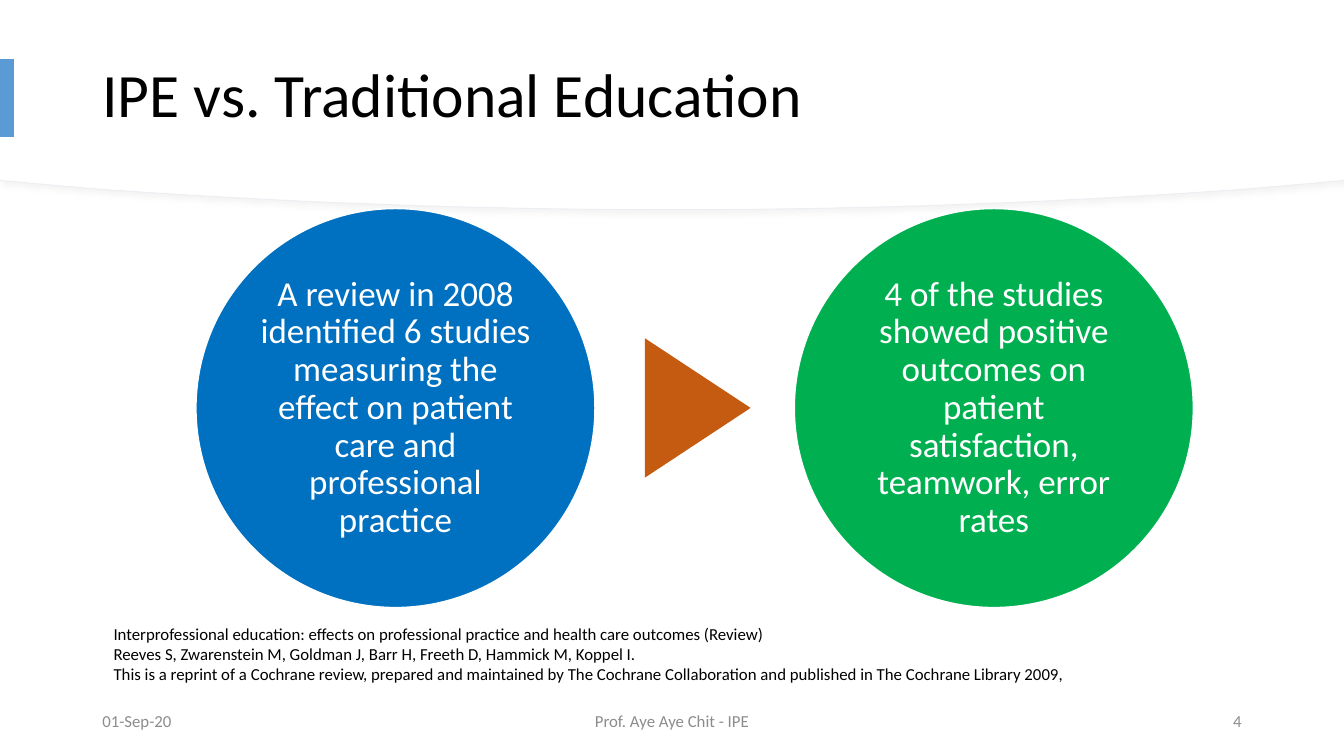
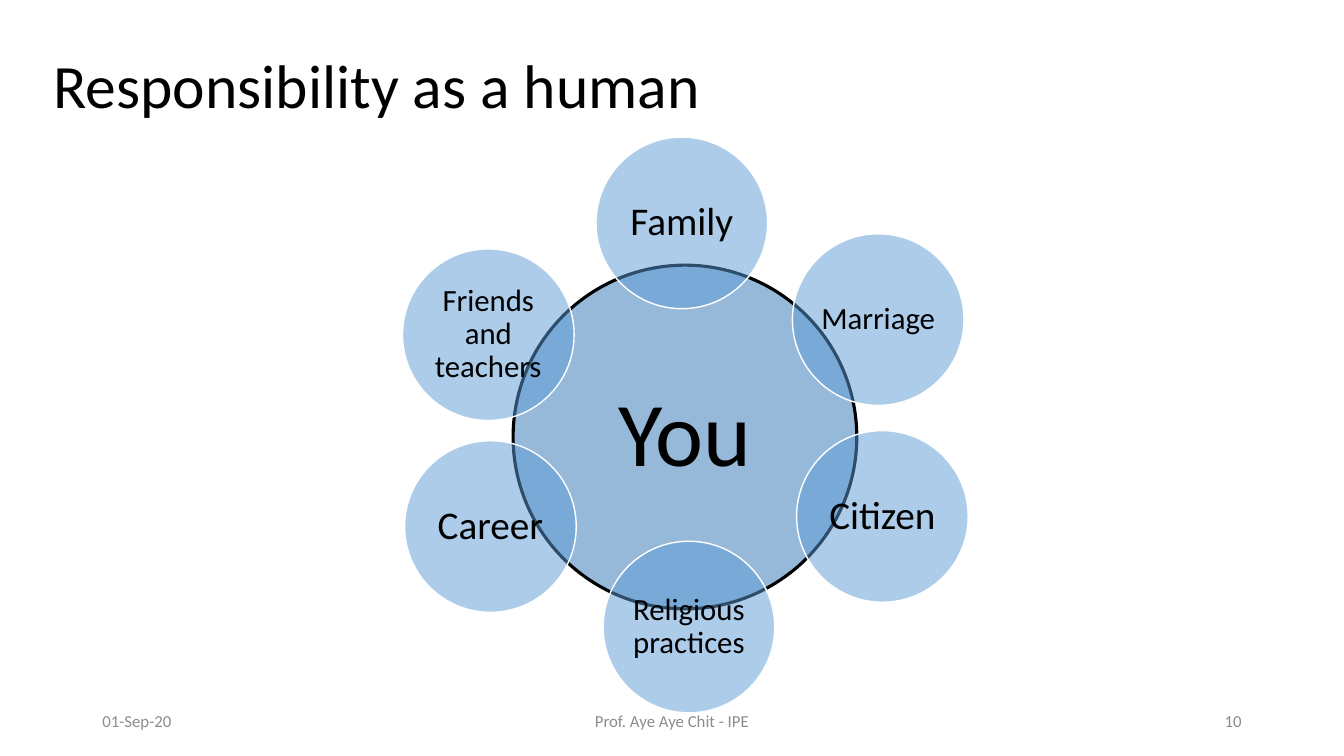
from dataclasses import dataclass
from typing import Optional

import pptx
import pptx.util
import pptx.dml.color
import pptx.enum.shapes
import pptx.enum.text
import pptx.oxml
import pptx.oxml.ns
import pptx.presentation
import pptx.shapes.autoshape
import pptx.slide

Pt = pptx.util.Pt
Align = pptx.enum.text.PP_ALIGN
Anchor = pptx.enum.text.MSO_ANCHOR
Kind = pptx.enum.shapes.MSO_SHAPE
Deck = pptx.presentation.Presentation
Slide = pptx.slide.Slide
Shape = pptx.shapes.autoshape.Shape

WIDTH, HEIGHT = 960, 540
FONT = "Calibri"
COLORS = {
    "black": "000000",
    "white": "FFFFFF",
    "gray": "8C8C8C",
    "edge": "EBEEF2",
    "shade": "D9D9D9",
    "accent": "5B9BD5",
    "hub": "2E75B6",
    "blue": "0070C0",
    "green": "00B050",
    "orange": "C55A11",
}


@dataclass
class Box:
    left: float
    top: float
    width: float
    height: float

    def spread(self) -> list[pptx.util.Length]:
        return [Pt(v) for v in (self.left, self.top, self.width, self.height)]


@dataclass
class Disc:
    text: str
    left: float
    top: float
    side: float
    size: float
    fill: str
    inset: float = 2.2
    line: str = "white"
    weight: float = 1
    alpha: Optional[int] = None


@dataclass
class Note:
    box: Box
    align: Align


FOOTERS = [
    Note(Box(66, 500.5, 216, 28.75), Align.LEFT),
    Note(Box(318, 500.5, 324, 28.75), Align.CENTER),
    Note(Box(678, 500.5, 216, 28.75), Align.RIGHT),
]
DATE = "01-Sep-20"
AUTHOR = "Prof. Aye Aye Chit - IPE"

REVIEW = [
    Disc("A review in 2008 identified 6 studies measuring the effect on patient "
         "care and professional practice", 140, 149, 285, 25, "blue"),
    Disc("4 of the studies showed positive outcomes on patient satisfaction, "
         "teamwork, error rates", 567.4, 149, 285, 25, "green"),
]
SOURCE = [
    "Interprofessional education: effects on professional practice and health care outcomes (Review)",
    "Reeves S, Zwarenstein M, Goldman J, Barr H, Freeth D, Hammick M, Koppel I.",
    "This is a reprint of a Cochrane review, prepared and maintained by The Cochrane "
    "Collaboration and published in The Cochrane Library 2009,",
]

HUB = Disc("You", 366.5, 189.4, 245.5, 65, "hub", 6.5, "black", 2.25, 50)
ROLES = [
    ("Family", 425.7, 97.9, 28),
    ("Marriage", 566, 167, 22),
    ("Citizen", 569, 307.6, 28),
    ("Religious practices", 430.8, 386.6, 22),
    ("Career", 289, 314.8, 28),
    ("Friends and teachers", 287.5, 177.8, 22),
]
ROLE_SIDE = 122.6


def color(name: str) -> pptx.dml.color.RGBColor:
    return pptx.dml.color.RGBColor.from_string(COLORS[name])


def paint(shape: Shape, fill: str, line: Optional[str] = None, weight: float = 1,
          alpha: Optional[int] = None) -> None:
    shape.shadow.inherit = False
    shape.fill.solid()
    shape.fill.fore_color.rgb = color(fill)
    if alpha is not None:
        tint = shape.element.spPr.find(pptx.oxml.ns.qn("a:solidFill"))[0]
        tint.append(pptx.oxml.parse_xml(
            f'<a:alpha {pptx.oxml.ns.nsdecls("a")} val="{alpha * 1000}"/>'))
    if line is None:
        shape.line.fill.background()
    else:
        shape.line.color.rgb = color(line)
        shape.line.width = Pt(weight)


def write(shape: Shape, lines: list[str], size: float, ink: str = "black",
          align: Align = Align.LEFT, anchor: Anchor = Anchor.MIDDLE,
          inset: Optional[float] = None, pitch: float = 1) -> None:
    frame = shape.text_frame
    frame.word_wrap = True
    frame.auto_size = pptx.enum.text.MSO_AUTO_SIZE.NONE
    frame.vertical_anchor = anchor
    if inset is not None:
        frame.margin_left = frame.margin_right = Pt(inset)
        frame.margin_top = frame.margin_bottom = Pt(inset)
    frame.text = "\n".join(lines)
    for para in frame.paragraphs:
        para.alignment = align
        para.line_spacing = pitch
        para.font.name = FONT
        para.font.size = Pt(size)
        para.font.color.rgb = color(ink)


def label(slide: Slide, box: Box, lines: list[str], align: Align = Align.LEFT,
          ink: str = "black", anchor: Anchor = Anchor.MIDDLE) -> None:
    write(slide.shapes.add_textbox(*box.spread()), lines, 12, ink, align, anchor)


def draw(slide: Slide, disc: Disc, ink: str) -> None:
    box = Box(disc.left, disc.top, disc.side, disc.side)
    shape = slide.shapes.add_shape(Kind.OVAL, *box.spread())
    paint(shape, disc.fill, disc.line, disc.weight, disc.alpha)
    write(shape, [disc.text], disc.size, ink, Align.CENTER, inset=disc.inset, pitch=0.9)


def curve(start: tuple, pull: tuple, push: tuple, end: tuple, steps: int = 24) -> list[tuple]:
    dots = []
    for step in range(1, steps + 1):
        t = step / steps
        u = 1 - t
        dots.append(tuple(u**3 * a + 3 * u * u * t * b + 3 * u * t * t * c + t**3 * d
                          for a, b, c, d in zip(start, pull, push, end)))
    return dots


def sweep(slide: Slide, low: float) -> Shape:
    mid = (WIDTH / 2, low)
    right, left = (894.3, low - 15.1), (65.7, low - 15.1)
    dots = [(WIDTH, 0), (WIDTH, low - 20.9), right]
    dots += curve(right, (766.8, low - 5.8), (627.1, low), mid)
    dots += curve(mid, (332.9, low), (193.2, low - 5.8), left)
    dots.append((0, low - 20.9))
    pen = slide.shapes.build_freeform(0, 0)
    pen.add_line_segments([(Pt(x), Pt(y)) for x, y in dots], close=True)
    return pen.convert_to_shape()


def band(slide: Slide) -> None:
    back = sweep(slide, 149.8)
    paint(back, "white", "edge", 0.75)
    glow = back.element.spPr.find(pptx.oxml.ns.qn("a:effectLst"))
    glow.append(pptx.oxml.parse_xml(
        f'<a:outerShdw {pptx.oxml.ns.nsdecls("a")} blurRad="{Pt(4)}" dist="{Pt(3)}" '
        f'dir="2700000" algn="tl" rotWithShape="0"><a:srgbClr val="{COLORS["shade"]}">'
        '<a:alpha val="30000"/></a:srgbClr></a:outerShdw>'))
    paint(sweep(slide, 149.2), "white")
    mark = slide.shapes.add_shape(Kind.RECTANGLE, *Box(0, 42.3, 10, 55.5).spread())
    paint(mark, "accent")


def start(deck: Deck, text: str, box: Box) -> Slide:
    slide = deck.slides.add_slide(deck.slide_layouts[5])
    title = slide.shapes.title
    title.left, title.top, title.width, title.height = box.spread()
    write(title, [text], 44, pitch=0.9)
    return slide


def footer(slide: Slide, page: int) -> None:
    for note, text in zip(FOOTERS, (DATE, AUTHOR, str(page))):
        label(slide, note.box, [text], note.align, "gray")


def compare(deck: Deck) -> None:
    slide = start(deck, "IPE vs. Traditional Education", Box(66, 20, 828, 100))
    band(slide)
    title = slide.shapes.title.element
    title.getparent().append(title)
    for disc in REVIEW:
        draw(slide, disc, "white")
    arrow = slide.shapes.add_shape(Kind.ISOSCELES_TRIANGLE, *Box(448.5, 253.6, 99.7, 75.6).spread())
    arrow.rotation = 90
    paint(arrow, "orange")
    label(slide, Box(74, 442, 868, 51), SOURCE, anchor=Anchor.TOP)
    footer(slide, 4)


def duties(deck: Deck) -> None:
    slide = start(deck, "Responsibility as a human", Box(31, 21.5, 489, 84))
    draw(slide, HUB, "black")
    for text, left, top, size in ROLES:
        draw(slide, Disc(text, left, top, ROLE_SIDE, size, "accent", alpha=50), "black")
    footer(slide, 10)


def main() -> None:
    deck = pptx.Presentation()
    deck.slide_width, deck.slide_height = Pt(WIDTH), Pt(HEIGHT)
    compare(deck)
    duties(deck)
    deck.save("out.pptx")


if __name__ == "__main__":
    main()
